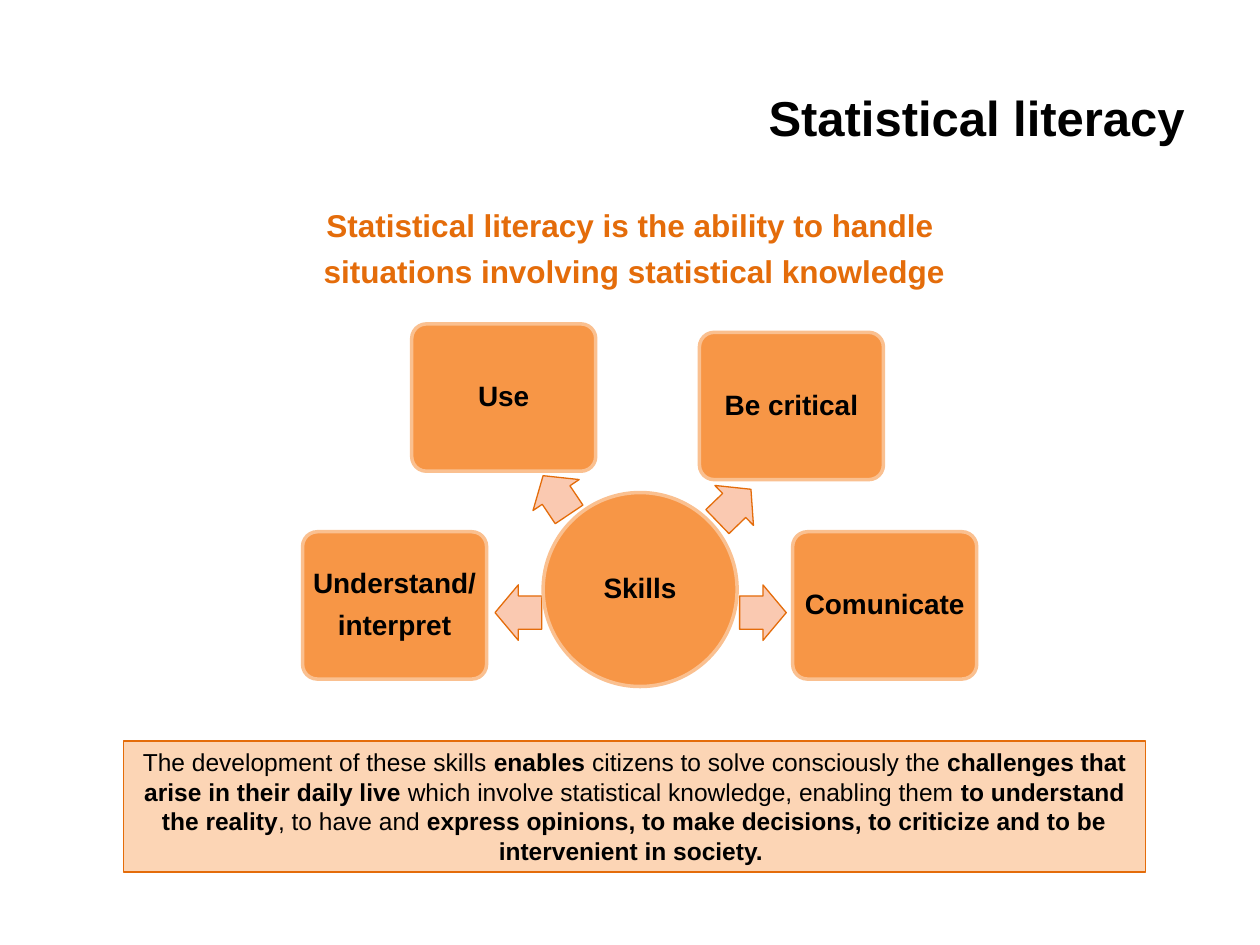
from pptx import Presentation
from pptx.dml.color import RGBColor
from pptx.enum.shapes import MSO_SHAPE as Shape
from pptx.enum.text import MSO_ANCHOR as Anchor, PP_ALIGN as Align
from pptx.util import Cm, Pt

COLORS = {
    "text": "000000",
    "accent": "E46C0A",
    "skill": "F79646",
    "skill_line": "FAC090",
    "arrow": "FAC9B1",
    "panel": "FCD5B5",
}

TITLE = [["Statistical literacy"]]
DEFINITION = [
    ["Statistical literacy is the ability to handle "],
    ["situations involving statistical knowledge"],
]
CONCLUSION = [[
    "The development of these skills ",
    "enables",
    " citizens to solve consciously the ",
    "challenges that arise in their daily live ",
    "which involve statistical knowledge, enabling them ",
    "to understand the reality",
    ", to have and ",
    "express opinions, to make decisions, to criticize and to be intervenient in society. ",
]]
SKILLS = [
    ([["Understand/"], ["interpret"]], 6.1, 10.72),
    ([["Use"]], 8.3, 6.53),
    ([["Be critical"]], 14.1, 6.7),
    ([["Comunicate"]], 15.98, 10.72),
]
ARROWS = [(9.98, 11.79, 0), (10.74, 9.42, 56.1), (14.33, 9.63, 136), (14.91, 11.79, 180)]
SKILL_SIZE = (3.71, 2.97)
ARROW_SIZE = (0.94, 1.12)
LINE_HEIGHT = 1.15


def write(shape, paragraphs, size, color="text", align=Align.CENTER, anchor=Anchor.MIDDLE,
          bold_cycle=(True,), spaced=False, inset=None):
    frame = shape.text_frame
    frame.word_wrap = True
    frame.vertical_anchor = anchor
    if inset is not None:
        frame.margin_left = frame.margin_right = Cm(inset)
        frame.margin_top = frame.margin_bottom = Cm(inset)
    for index, pieces in enumerate(paragraphs):
        paragraph = frame.add_paragraph() if index else frame.paragraphs[0]
        paragraph.alignment = align
        if spaced:
            paragraph.line_spacing = 0.9
            paragraph.space_after = Pt(round(0.35 * LINE_HEIGHT * size, 1))
        for position, piece in enumerate(pieces):
            run = paragraph.add_run()
            run.text = piece
            run.font.name = "Arial"
            run.font.size = Pt(size)
            run.font.bold = bold_cycle[position % len(bold_cycle)]
            run.font.color.rgb = RGBColor.from_string(COLORS[color])


def add_box(left, top, width, height):
    return slide.shapes.add_textbox(Cm(left), Cm(top), Cm(width), Cm(height))


def add_figure(kind, left, top, width, height, fill, line, weight, adjustments=()):
    shape = slide.shapes.add_shape(kind, Cm(left), Cm(top), Cm(width), Cm(height))
    shape.shadow.inherit = False
    shape.fill.solid()
    shape.fill.fore_color.rgb = RGBColor.from_string(COLORS[fill])
    shape.line.color.rgb = RGBColor.from_string(COLORS[line])
    shape.line.width = Pt(weight)
    for index, value in enumerate(adjustments):
        shape.adjustments[index] = value
    return shape


presentation = Presentation()
presentation.slide_width, presentation.slide_height = Cm(25.4), Cm(19.05)
slide = presentation.slides.add_slide(presentation.slide_layouts[6])

write(add_box(6.71, 0.76, 17.42, 3.18), TITLE, 28, align=Align.RIGHT)
write(add_box(3.99, 4.11, 17.6, 1.91), DEFINITION, 18, color="accent",
      anchor=Anchor.TOP, spaced=True)

panel = add_figure(Shape.RECTANGLE, 2.49, 14.94, 20.6, 2.64, "panel", "accent", 0.75)
write(panel, CONCLUSION, 14, anchor=Anchor.TOP, bold_cycle=(False, True))

for left, top, rotation in ARROWS:
    arrow = add_figure(Shape.LEFT_ARROW, left, top, *ARROW_SIZE, "arrow", "accent", 0.75, (0.6, 0.5))
    arrow.rotation = rotation

hub = add_figure(Shape.OVAL, 10.95, 9.93, 3.91, 3.91, "skill", "skill_line", 2)
write(hub, [["Skills"]], 16, spaced=True, inset=0.03)

for label, left, top in SKILLS:
    card = add_figure(Shape.ROUNDED_RECTANGLE, left, top, *SKILL_SIZE, "skill", "skill_line", 2, (0.1,))
    write(card, label, 16, spaced=True, inset=0.08)

presentation.save("out.pptx")
